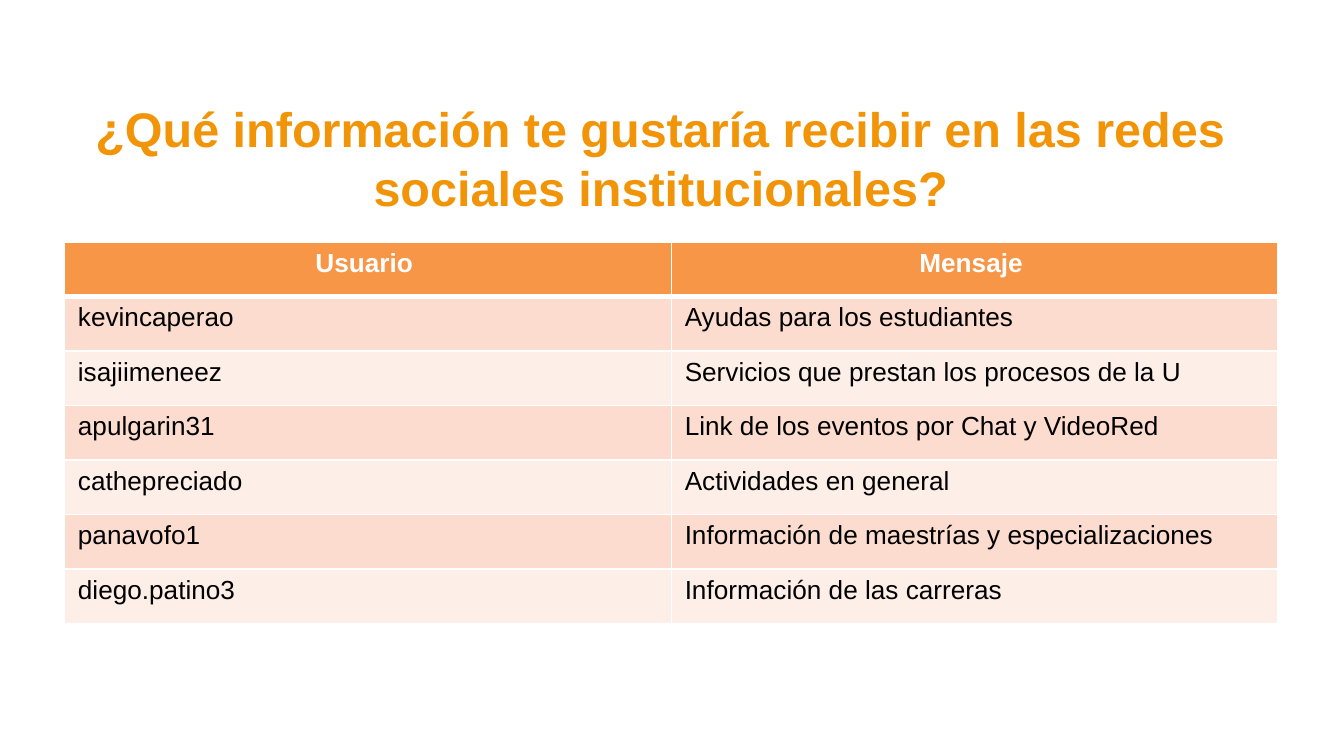
from lxml import etree
from pptx import Presentation
from pptx.dml.color import RGBColor
from pptx.enum.text import MSO_ANCHOR, PP_ALIGN
from pptx.oxml.ns import qn
from pptx.util import Inches, Pt

CENTER, LEFT = PP_ALIGN.CENTER, PP_ALIGN.LEFT
TOP = MSO_ANCHOR.TOP
TITLE_ONLY = 5
WIDTH = 10
HEIGHT = WIDTH * 9 / 16
MARGIN = 0.48
COLORS = {
    "title": "F19408",
    "header": "F79646",
    "odd": "FCDCCE",
    "even": "FDEEE8",
    "white": "FFFFFF",
    "black": "000000",
}
TITLE = "¿Qué información te gustaría recibir en las redes sociales institucionales?"
ROWS = [
    ("Usuario ", "Mensaje "),
    ("kevincaperao", "Ayudas para los estudiantes"),
    ("isajiimeneez", "Servicios que prestan los procesos de la U"),
    ("apulgarin31", "Link de los eventos por Chat y VideoRed"),
    ("cathepreciado", "Actividades en general"),
    ("panavofo1", "Información de maestrías y especializaciones"),
    ("diego.patino3", "Información de las carreras"),
]


def write_text(tf, text, align, color, **font):
    """Fill a text frame with one formatted paragraph."""
    p = tf.paragraphs[0]
    p.alignment = align
    r = p.add_run()
    r.text = text
    r.font.color.rgb = RGBColor.from_string(COLORS[color])
    for name, value in {"name": "Arial", **font}.items():
        setattr(r.font, name, value)


def add_title(s):
    """Place and format the title placeholder."""
    sp = s.shapes.title
    box = {"left": MARGIN, "top": 0.69, "width": 8.88, "height": 1.03}
    for name, value in box.items():
        setattr(sp, name, Inches(value))
    sp.text_frame.vertical_anchor = TOP
    write_text(sp.text_frame, TITLE, CENTER, "title", size=Pt(26), bold=True)


def set_borders(cell, **widths):
    """Draw white cell borders with the given widths in points."""
    tc_pr = cell._tc.get_or_add_tcPr()
    for side in "LRTB":
        ln = etree.SubElement(tc_pr, qn(f"a:ln{side}"), w=str(Pt(widths.get(side, 1))))
        fill = etree.SubElement(ln, qn("a:solidFill"))
        etree.SubElement(fill, qn("a:srgbClr"), val=COLORS["white"])


def format_cell(cell, text, row):
    """Write and colour one cell according to its row."""
    header = row == 0
    band = "header" if header else ("even", "odd")[row % 2]
    set_borders(cell, **{0: {"B": 3}, 1: {"T": 3}}.get(row, {}))
    cell.fill.solid()
    cell.fill.fore_color.rgb = RGBColor.from_string(COLORS[band])
    write_text(
        cell.text_frame,
        text,
        CENTER if header else LEFT,
        "white" if header else "black",
        size=Pt(14),
        bold=header,
    )


def add_message_table(s):
    """Add the table of users and their messages."""
    frame = s.shapes.add_table(
        len(ROWS), len(ROWS[0]),
        Inches(MARGIN), Inches(1.8), Inches(9.03), Inches(2.84),
    )
    for i, row in enumerate(ROWS):
        for j, text in enumerate(row):
            format_cell(frame.table.cell(i, j), text, i)


def main():
    """Build and save the slide."""
    prs = Presentation()
    prs.slide_width, prs.slide_height = Inches(WIDTH), Inches(HEIGHT)
    s = prs.slides.add_slide(prs.slide_layouts[TITLE_ONLY])
    add_title(s)
    add_message_table(s)
    prs.save("out.pptx")


if __name__ == "__main__":
    main()
